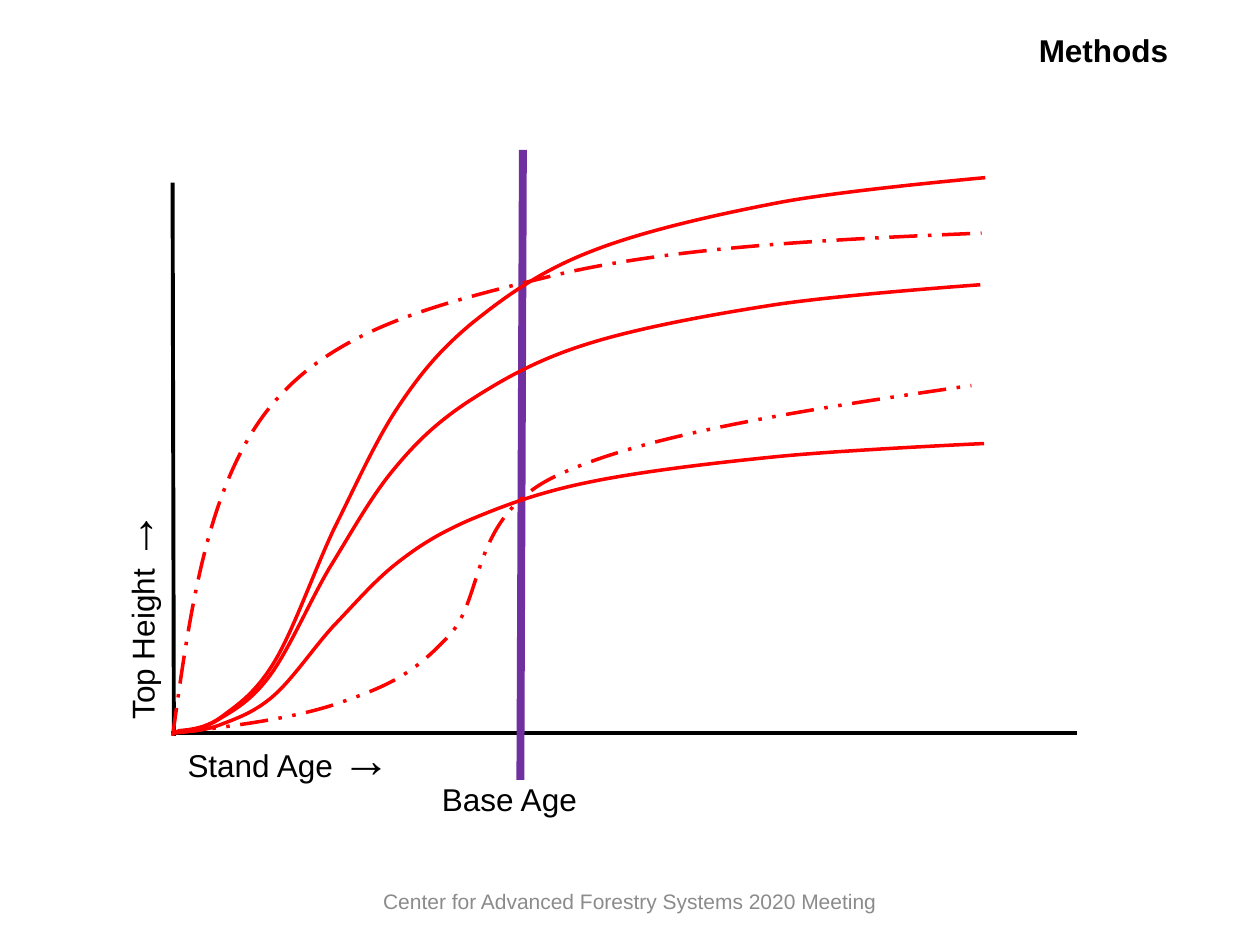
"""Build the Methods slide with height-over-age growth curves."""
from lxml.etree import SubElement
from pptx import Presentation
from pptx.dml.color import RGBColor
from pptx.enum.dml import MSO_LINE
from pptx.enum.shapes import MSO_CONNECTOR
from pptx.enum.text import MSO_ANCHOR, MSO_AUTO_SIZE, PP_ALIGN
from pptx.oxml.ns import qn
from pptx.util import Inches, Pt

BLACK = RGBColor(0x00, 0x00, 0x00)
GRAY = RGBColor(0x8B, 0x8B, 0x8B)
PURPLE = RGBColor(0x70, 0x30, 0xA0)
RED = RGBColor(0xFF, 0x00, 0x00)

FOOTER = "Center for Advanced Forestry Systems 2020 Meeting"
AXIS_LABELS = [
    ("Stand Age ", (1.39, 5.73, 1.94, 0.57), 0),
    ("Top Height ", (0.14, 4.59, 1.87, 0.57), 270),
]
LINES = [
    ((1.36, 5.82), (8.55, 5.82), BLACK, 2.25),
    ((1.37, 1.45), (1.38, 5.84), BLACK, 2.25),
]
BASE_AGE_LINE = ((4.15, 1.19), (4.13, 6.19), PURPLE, 4.5)

GROWTH_HEIGHT = 4.39
GROWTH = [
    (0, 4.39), (0.11, 4.38), (0.23, 4.37), (0.36, 4.27),
    (0.48, 4.18), (0.62, 4.09), (0.77, 3.84),
    (0.92, 3.59), (1.08, 3.13), (1.24, 2.79),
    (1.41, 2.45), (1.57, 2.09), (1.75, 1.82),
    (1.93, 1.55), (2.08, 1.37), (2.33, 1.16),
    (2.58, 0.96), (2.86, 0.75), (3.27, 0.59),
    (3.67, 0.43), (4.24, 0.3), (4.76, 0.2),
    (5.28, 0.1), (6.41, 0), (6.41, 0),
]
SITES = [(1.37, 2.26, 3.55), (1.4, 3.52, 2.29), (1.41, 1.41, 4.39)]
DASHED = [
    (MSO_LINE.LONG_DASH_DOT, [
        (1.37, 5.84), (1.51, 4.83), (1.65, 3.82), (2.16, 3.21),
        (2.67, 2.6), (3.48, 2.41), (4.42, 2.18),
        (5.36, 1.96), (6.58, 1.9), (7.79, 1.85)]),
    (MSO_LINE.DASH_DOT_DOT, [
        (1.38, 5.82), (1.87, 5.76), (2.36, 5.7), (2.72, 5.57),
        (3.09, 5.44), (3.28, 5.35), (3.56, 5.05),
        (3.85, 4.75), (3.72, 4.11), (4.41, 3.78),
        (5.1, 3.45), (6.4, 3.25), (7.71, 3.06)]),
]


def add_text(s, box, runs, color=BLACK, align=PP_ALIGN.LEFT, bold=False):
    tb = s.shapes.add_textbox(*map(Inches, box))
    tf = tb.text_frame
    tf.word_wrap = True
    p = tf.paragraphs[0]
    p.alignment = align
    for text, size in runs:
        r = p.add_run()
        r.text = text
        r.font.name = "Arial"
        r.font.size = Pt(size)
        r.font.bold = bold
        r.font.color.rgb = color
    return tb


def add_line(s, start, end, color, width):
    line = s.shapes.add_connector(MSO_CONNECTOR.STRAIGHT, *map(Inches, start + end))
    line.line.color.rgb = color
    line.line.width = Pt(width)
    SubElement(line._element.spPr, qn("a:effectLst"))


def add_curve(s, points, dash=None):
    start, *rest = [(Inches(x), Inches(y)) for x, y in points]
    builder = s.shapes.build_freeform(*start)
    builder.add_line_segments(rest, close=False)
    sp = builder.convert_to_shape()
    sp.shadow.inherit = False
    sp.fill.background()
    sp.line.color.rgb = RED
    sp.line.width = Pt(2)
    if dash:
        sp.line.dash_style = dash
    outline = sp._element.spPr.find(".//" + qn("a:path"))
    segments = outline.findall(qn("a:lnTo"))
    for i in range(0, len(segments), 3):
        bezier = SubElement(outline, qn("a:cubicBezTo"))
        for segment in segments[i:i + 3]:
            bezier.append(segment[0])
            outline.remove(segment)


def main():
    prs = Presentation()
    prs.slide_width, prs.slide_height = Inches(10), Inches(7.5)
    s = prs.slides.add_slide(prs.slide_layouts[6])

    footer = add_text(s, (2.75, 6.95, 4.5, 0.4), [(FOOTER, 12)], GRAY, PP_ALIGN.CENTER)
    footer.text_frame.vertical_anchor = MSO_ANCHOR.MIDDLE
    title = add_text(s, (7.15, 0.2, 2.22, 0.4), [("Methods", 18)],
                     align=PP_ALIGN.RIGHT, bold=True)
    title.text_frame.word_wrap = False

    for line in LINES:
        add_line(s, *line)
    for text, box, rotation in AXIS_LABELS:
        label = add_text(s, box, [(text, 18), ("→", 28)])
        label.text_frame.auto_size = MSO_AUTO_SIZE.SHAPE_TO_FIT_TEXT
        label.rotation = rotation

    add_line(s, *BASE_AGE_LINE)
    base = add_text(s, (3.41, 6.14, 1.43, 0.4), [("Base Age", 18)])
    base.text_frame.auto_size = MSO_AUTO_SIZE.SHAPE_TO_FIT_TEXT

    for left, top, height in SITES:
        scale = height / GROWTH_HEIGHT
        add_curve(s, [(left + x, top + y * scale) for x, y in GROWTH])
    for dash, points in DASHED:
        add_curve(s, points, dash)

    prs.save("out.pptx")


if __name__ == "__main__":
    main()
